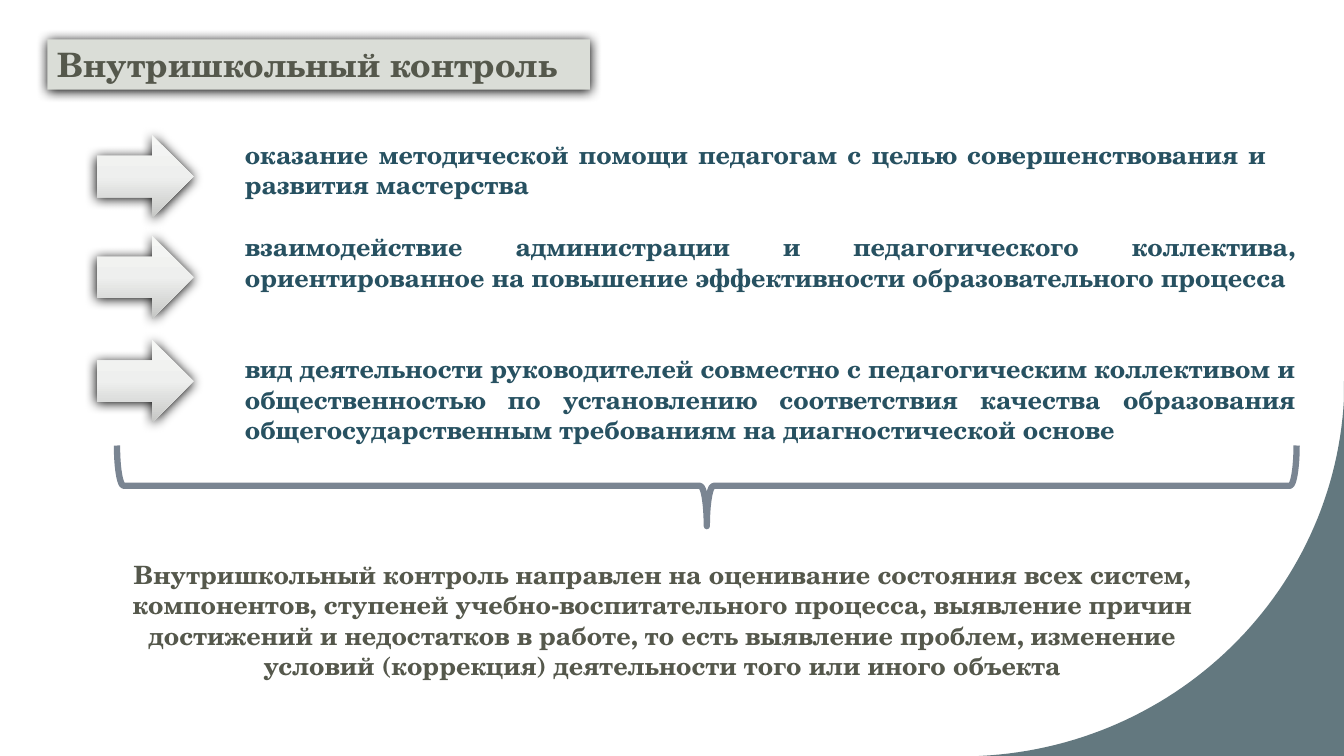
"""Build the slide on the aims of internal school control."""
import pptx
import pptx.dml.color
import pptx.enum.shapes
import pptx.enum.text
import pptx.oxml
import pptx.oxml.ns
import pptx.util
from dataclasses import dataclass

Inches = pptx.util.Inches
Kind = pptx.enum.shapes.MSO_SHAPE
Align = pptx.enum.text.PP_ALIGN


@dataclass(frozen=True)
class Theme:
    font: str = "TeX Gyre Schola"
    title_size: int = 24
    body_size: int = 18
    corner: str = "63787F"
    panel: str = "DADDD7"
    olive: str = "55584C"
    teal: str = "275161"
    brace: str = "7A8592"
    shadow: str = "000000"
    arrow_stops: tuple = ((0, "F6F7F5"), (50, "EEEFEE"), (100, "C6C7C5"))


theme = Theme()
rgb = pptx.dml.color.RGBColor.from_string
namespace = pptx.oxml.ns.nsdecls("a")


def write(box, text, size, color, align):
    """Put one bold paragraph into a box."""
    frame = box.text_frame
    frame.word_wrap = True
    frame.vertical_anchor = pptx.enum.text.MSO_ANCHOR.TOP
    para = frame.paragraphs[0]
    para.alignment = align
    span = para.add_run()
    span.text = text
    formats = {"name": theme.font, "size": pptx.util.Pt(size), "bold": True}
    for name, value in formats.items():
        setattr(span.font, name, value)
    span.font.color.rgb = rgb(color)


def add_shadowed(kind, left, top, width, height):
    """Add a borderless shape with a soft shadow below it."""
    shape = page.shapes.add_shape(kind, Inches(left), Inches(top), Inches(width), Inches(height))
    shape.line.fill.background()
    shape.shadow.inherit = False
    effects = shape._element.spPr.find(pptx.oxml.ns.qn("a:effectLst"))
    effects.append(pptx.oxml.parse_xml(
        f'<a:outerShdw {namespace} blurRad="{pptx.util.Pt(8.5)}" dist="{pptx.util.Pt(1)}" '
        f'dir="5400000" rotWithShape="0"><a:srgbClr val="{theme.shadow}"/></a:outerShdw>'))
    return shape


deck = pptx.Presentation()
deck.slide_width, deck.slide_height = Inches(13.33), Inches(7.5)
page = deck.slides.add_slide(deck.slide_layouts[6])

curve = ((9.71, 7.5), (11.67, 7.41), (13.23, 5.87), (13.33, 3.96))
steps = 60
outline = [(13.33, 7.5), (9.63, 7.5)]
for step in range(steps + 1):
    t = step / steps
    weights = ((1 - t) ** 3, 3 * t * (1 - t) ** 2, 3 * t ** 2 * (1 - t), t ** 3)
    outline.append(tuple(sum(w * point[axis] for w, point in zip(weights, curve)) for axis in (0, 1)))
builder = page.shapes.build_freeform(Inches(13.33), Inches(3.78), scale=1.0)
builder.add_line_segments([(Inches(x), Inches(y)) for x, y in outline], close=True)
corner = builder.convert_to_shape()
corner.fill.solid()
corner.fill.fore_color.rgb = rgb(theme.corner)
corner.line.fill.background()
corner.shadow.inherit = False

title = add_shadowed(Kind.RECTANGLE, 0.47, 0.39, 5.38, 0.5)
title.fill.solid()
title.fill.fore_color.rgb = rgb(theme.panel)
write(title, "Внутришкольный контроль", theme.title_size, theme.olive, Align.LEFT)

stops = "".join(f'<a:gs pos="{place * 1000}"><a:srgbClr val="{color}"/></a:gs>'
                for place, color in theme.arrow_stops)
for top in (3.37, 2.34, 1.34):
    arrow = add_shadowed(Kind.RIGHT_ARROW, 0.96, top, 0.96, 0.82)
    geometry = arrow._element.spPr.find(pptx.oxml.ns.qn("a:prstGeom"))
    geometry.addnext(pptx.oxml.parse_xml(
        f'<a:gradFill {namespace} rotWithShape="1"><a:gsLst>{stops}</a:gsLst>'
        '<a:lin ang="5400000" scaled="0"/></a:gradFill>'))

texts = (
    (2.33, 1.33, 10.33, 0.71, theme.teal, Align.JUSTIFY,
     "оказание методической помощи педагогам с целью совершенствования и развития мастерства"),
    (2.33, 2.25, 10.62, 1.01, theme.teal, Align.JUSTIFY,
     "взаимодействие администрации и педагогического коллектива, ориентированное на повышение "
     "эффективности образовательного процесса "),
    (2.33, 3.46, 10.62, 1.01, theme.teal, Align.JUSTIFY,
     "вид деятельности руководителей совместно с педагогическим коллективом и общественностью "
     "по установлению соответствия качества образования общегосударственным требованиям "
     "на диагностической основе"),
    (0.96, 5.5, 11.22, 1.31, theme.olive, Align.CENTER,
     "Внутришкольный контроль направлен на оценивание состояния всех систем, компонентов, "
     "ступеней учебно-воспитательного процесса, выявление причин достижений и недостатков "
     "в работе, то есть выявление проблем, изменение условий (коррекция) деятельности того "
     "или иного объекта"),
)
for left, top, width, height, color, align, text in texts:
    box = page.shapes.add_textbox(Inches(left), Inches(top), Inches(width), Inches(height))
    write(box, text, theme.body_size, color, align)

brace = page.shapes.add_shape(Kind.RIGHT_BRACE, Inches(6.61), Inches(-1.03), Inches(0.8), Inches(11.7))
brace.rotation = 90
brace.fill.background()
brace.line.color.rgb = rgb(theme.brace)
brace.line.width = pptx.util.Pt(4.5)
brace.shadow.inherit = False

deck.save("out.pptx")
